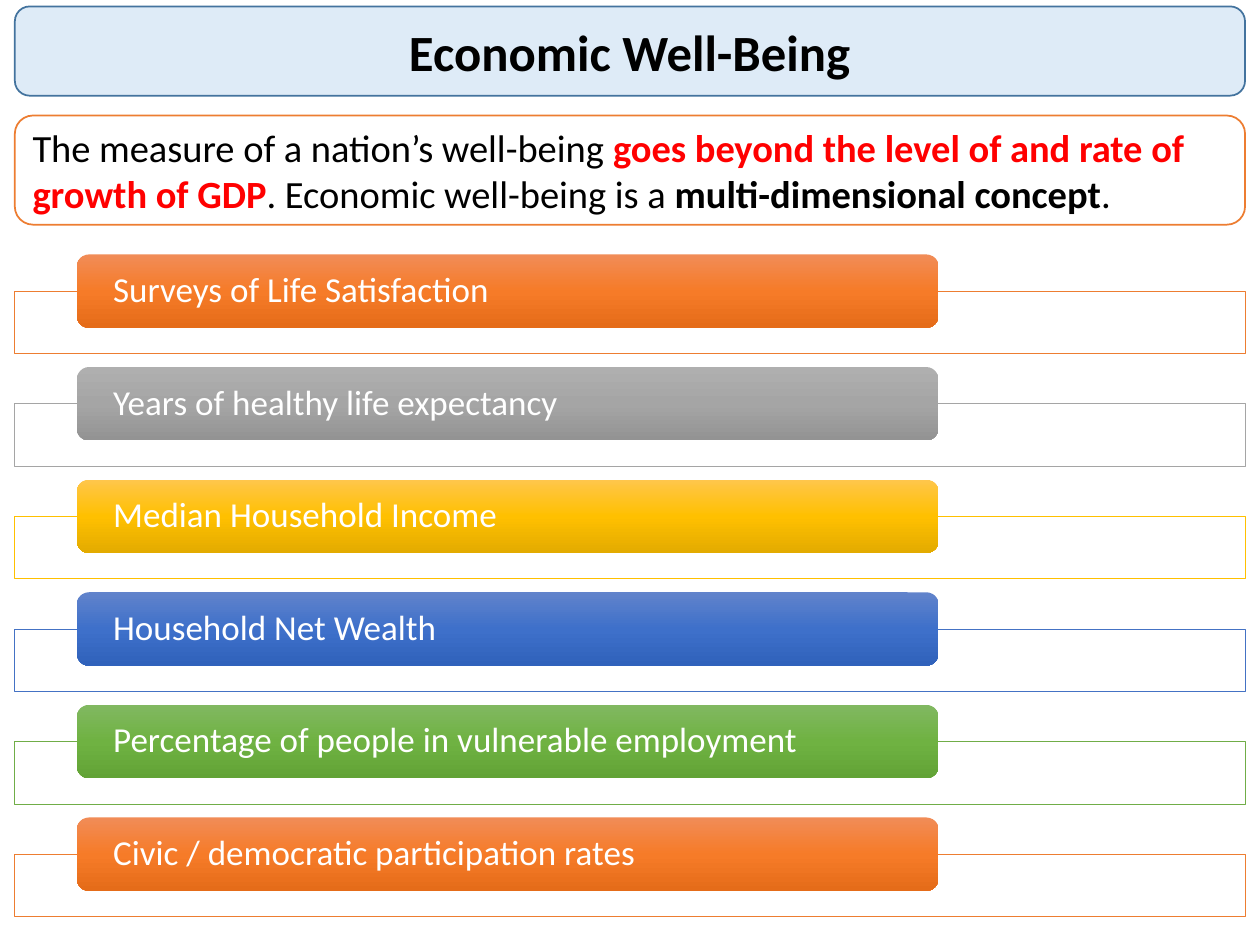
from copy import deepcopy

from lxml import etree
from pptx import Presentation
from pptx.dml.color import RGBColor
from pptx.enum import shapes, text
from pptx.oxml.ns import qn
from pptx.util import Cm, Pt

LEFT, FULL_WIDTH = 0.3, 24.8
FIRST_BAR_TOP, ROW_PITCH = 5.13, 2.27
FRAME_DROP = 0.74

ORANGE = ("ED7D31", ("F18C57", "F67B28", "E56C19"))
GREY = ("A5A5A5", ("AFAFAF", "A5A5A5", "939393"))
GOLD = ("FFC000", ("FFC64B", "FFC000", "E3AB00"))
BLUE = ("4472C4", ("6183CB", "3E70CA", "3062BB"))
GREEN = ("70AD47", ("81B861", "6FB242", "62A336"))

INDICATORS = [
    ("Surveys of Life Satisfaction", ORANGE),
    ("Years of healthy life expectancy", GREY),
    ("Median Household Income", GOLD),
    ("Household Net Wealth", BLUE),
    ("Percentage of people in vulnerable employment", GREEN),
    ("Civic / democratic participation rates", ORANGE),
]


def color(hex_value):
    return RGBColor.from_string(hex_value)


def add_box(slide, kind, left, top, width, height, fill=None, line=None, weight=1):
    box = slide.shapes.add_shape(kind, Cm(left), Cm(top), Cm(width), Cm(height))
    box.shadow.inherit = False
    if fill:
        box.fill.solid()
        box.fill.fore_color.rgb = color(fill)
    if line:
        box.line.color.rgb = color(line)
        box.line.width = Pt(weight)
    else:
        box.line.fill.background()
    return box


def write(box, runs, size, align=text.PP_ALIGN.LEFT):
    """Fill the box with one paragraph of (wording, colour, bold) runs."""
    frame = box.text_frame
    frame.word_wrap = True
    frame.vertical_anchor = text.MSO_ANCHOR.MIDDLE
    paragraph = frame.paragraphs[0]
    paragraph.alignment = align
    for wording, hex_value, bold in runs:
        run = paragraph.add_run()
        run.text = wording
        run.font.name = "Calibri"
        run.font.size = Pt(size)
        run.font.bold = bold
        run.font.color.rgb = color(hex_value)
    return paragraph


def shade_downwards(box, hex_values):
    """Apply a three-stop gradient from top to bottom."""
    box.fill.gradient()
    box.fill.gradient_angle = 270
    stops = box._element.spPr.find(qn("a:gradFill")).find(qn("a:gsLst"))
    stops.insert(1, deepcopy(stops[0]))
    for stop, position, hex_value in zip(box.fill.gradient_stops, (0, 0.5, 1), hex_values):
        stop.position = position
        stop.color.rgb = color(hex_value)


def set_opacity(box, percent):
    rgb = box._element.spPr.find(qn("a:solidFill"))[0]
    etree.SubElement(rgb, qn("a:alpha")).set("val", str(percent * 1000))


def add_indicator(slide, top, wording, outline, shades):
    # Outlined frame behind the bar
    frame = add_box(slide, shapes.MSO_SHAPE.RECTANGLE, LEFT, top + FRAME_DROP,
                    FULL_WIDTH, 1.26, "FFFFFF", outline, 0.5)
    set_opacity(frame, 90)

    # Shaded bar with the label
    bar = add_box(slide, shapes.MSO_SHAPE.ROUNDED_RECTANGLE, 1.55, top, 17.37, 1.48)
    shade_downwards(bar, shades)
    label = bar.text_frame
    label.margin_left = label.margin_right = Cm(0.66)
    label.margin_top = label.margin_bottom = 0
    write(bar, [(wording, "FFFFFF", False)], 20).line_spacing = 0.9


def main():
    deck = Presentation()
    deck.slide_width, deck.slide_height = Cm(25.4), Cm(19.05)
    slide = deck.slides.add_slide(deck.slide_layouts[6])
    rounded = shapes.MSO_SHAPE.ROUNDED_RECTANGLE

    # Title
    title = add_box(slide, rounded, LEFT, 0.13, FULL_WIDTH, 1.8, "DEEBF7", "43739E")
    write(title, [("Economic Well-Being", "000000", True)], 29, text.PP_ALIGN.CENTER)

    # Key statement
    statement = add_box(slide, rounded, LEFT, 2.33, FULL_WIDTH, 2.2, "FFFFFF", "ED7D31")
    write(statement, [
        ("The measure of a nation’s well-being ", "000000", False),
        ("goes beyond the level of and rate of growth of GDP", "FF0000", True),
        (". Economic well-being is a ", "000000", False),
        ("multi-dimensional concept", "000000", True),
        (".", "000000", False),
    ], 22)

    # Indicators
    for row, (wording, (outline, shades)) in enumerate(INDICATORS):
        add_indicator(slide, FIRST_BAR_TOP + row * ROW_PITCH, wording, outline, shades)

    deck.save("out.pptx")


if __name__ == "__main__":
    main()
